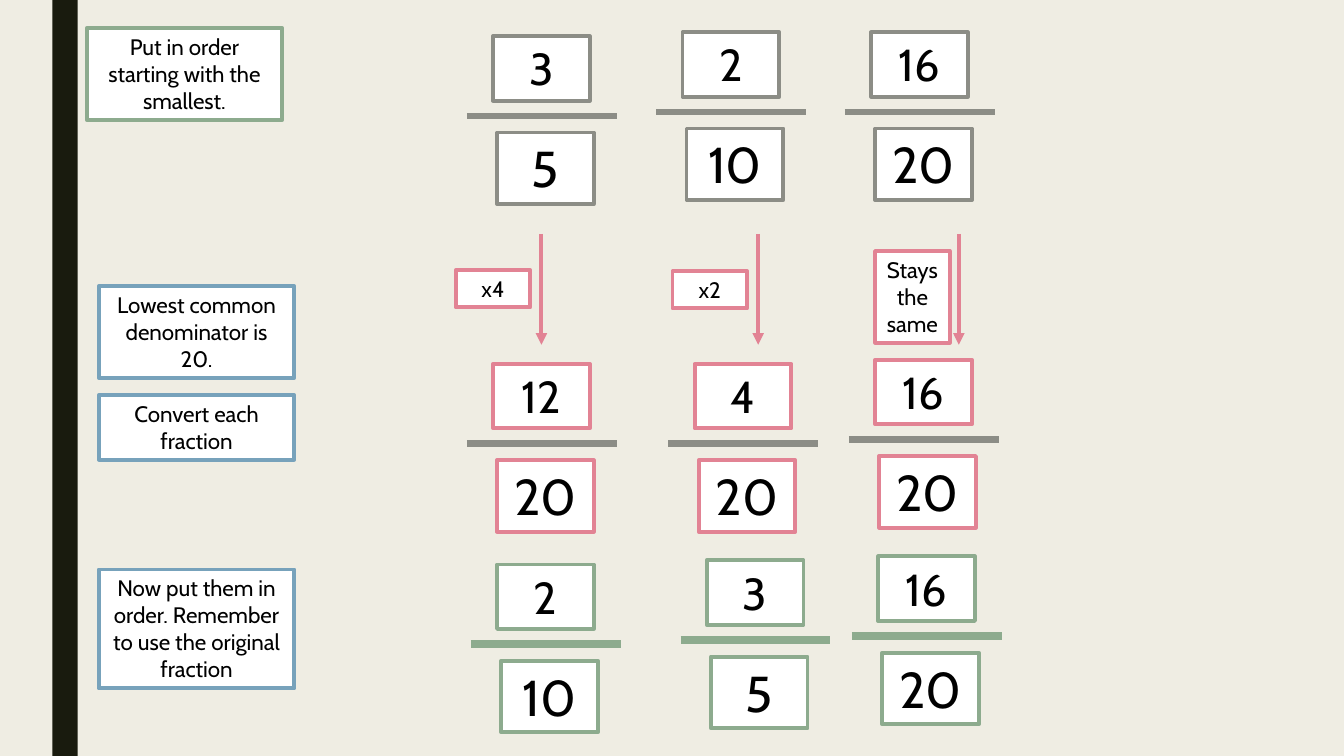
import pptx
import pptx.util
import pptx.dml.color
import pptx.enum.shapes
import pptx.enum.text
import pptx.oxml
import pptx.oxml.ns

Inches = pptx.util.Inches
Pt = pptx.util.Pt

COLOURS = {
    "background": "EFEDE3",
    "stripe": "191B0E",
    "box": "FFFFFF",
    "text": "000000",
    "grey": "8C8D86",
    "green": "8DAB8E",
    "blue": "77A2BB",
    "pink": "E28394",
}
FONT = "Cabin"
BORDER = 2.75

INSTRUCTIONS = [
    ("Put in order starting with the smallest.", 0.86, 0.28, 0.91, "green"),
    ("Lowest common denominator is 20.", 0.98, 2.84, 0.91, "blue"),
    ("Convert each fraction", 0.98, 3.92, 0.64, "blue"),
    ("Now put them in order. Remember to use the original fraction",
     0.98, 5.65, 1.18, "blue"),
]
FRACTION_ROWS = [
    ("grey", "grey", 4.5,
     [("3", "5", 4.89, 0.36), ("2", "10", 6.77, 0.32), ("16", "20", 8.64, 0.32)]),
    ("pink", "grey", 4.5,
     [("12", "20", 4.89, 3.61), ("4", "20", 6.89, 3.61), ("16", "20", 8.68, 3.57)]),
    ("green", "green", 6,
     [("2", "10", 4.93, 5.6), ("3", "5", 7.01, 5.56), ("16", "20", 8.71, 5.52)]),
]
CONVERSIONS = [
    ("x4", 4.52, 2.68, 0.37, 5.37),
    ("x2", 6.67, 2.69, 0.37, 7.52),
    ("Stays the same", 8.68, 2.49, 0.91, 9.51),
]
ARROW_TOP, ARROW_BOTTOM = 2.32, 3.42


def rgb(name):
    return pptx.dml.color.RGBColor.from_string(COLOURS[name])


def add_rectangle(shapes, left, top, width, height, fill):
    rectangle = shapes.add_shape(
        pptx.enum.shapes.MSO_SHAPE.RECTANGLE,
        Inches(left), Inches(top), Inches(width), Inches(height))
    rectangle.shadow.inherit = False
    rectangle.fill.solid()
    rectangle.fill.fore_color.rgb = rgb(fill)
    rectangle.line.fill.background()
    return rectangle


def add_box(shapes, text, left, top, width, height, border, size):
    box = add_rectangle(shapes, left, top, width, height, "box")
    box.line.color.rgb = rgb(border)
    box.line.width = Pt(BORDER)
    frame = box.text_frame
    frame.word_wrap = True
    frame.vertical_anchor = pptx.enum.text.MSO_ANCHOR.TOP
    frame.text = text
    paragraph = frame.paragraphs[0]
    paragraph.alignment = pptx.enum.text.PP_ALIGN.CENTER
    paragraph.font.name = FONT
    paragraph.font.size = Pt(size)
    paragraph.font.color.rgb = rgb("text")


def add_line(shapes, x1, y1, x2, y2, colour, weight):
    line = shapes.add_connector(
        pptx.enum.shapes.MSO_CONNECTOR.STRAIGHT,
        Inches(x1), Inches(y1), Inches(x2), Inches(y2))
    line.line.color.rgb = rgb(colour)
    line.line.width = Pt(weight)
    properties = line._element.spPr
    properties.append(pptx.oxml.parse_xml(
        f"<a:effectLst {pptx.oxml.ns.nsdecls('a')}/>"))
    return line


def add_fraction(shapes, numerator, denominator, left, top, border, bar, weight):
    parts = shapes.add_group_shape().shapes
    add_box(parts, numerator, left, top, 0.96, 0.64, border, 32)
    add_box(parts, denominator, left + 0.04, top + 0.955, 0.96, 0.71, border, 36)
    bar_left, bar_top = left - 0.26, top + 0.79
    add_line(parts, bar_left, bar_top, bar_left + 1.485, bar_top, bar, weight)


def main():
    deck = pptx.Presentation()
    deck.slide_width, deck.slide_height = Inches(13.33), Inches(7.5)
    slide = deck.slides.add_slide(deck.slide_layouts[6])
    slide.background.fill.solid()
    slide.background.fill.fore_color.rgb = rgb("background")
    shapes = slide.shapes

    add_rectangle(shapes, 0.52, 0, 0.25, 7.5, "stripe")

    for text, left, top, height, border in INSTRUCTIONS:
        add_box(shapes, text, left, top, 1.94, height, border, 16)

    for border, bar, weight, fractions in FRACTION_ROWS:
        for fraction in fractions:
            add_fraction(shapes, *fraction, border, bar, weight)

    for text, left, top, height, arrow_x in CONVERSIONS:
        arrow = add_line(shapes, arrow_x, ARROW_TOP, arrow_x, ARROW_BOTTOM,
                         "pink", BORDER)
        arrow.line._get_or_add_ln().append(pptx.oxml.parse_xml(
            f"<a:tailEnd {pptx.oxml.ns.nsdecls('a')} type='triangle'/>"))
        add_box(shapes, text, left, top, 0.74, height, "pink", 16)

    deck.save("out.pptx")


if __name__ == "__main__":
    main()
